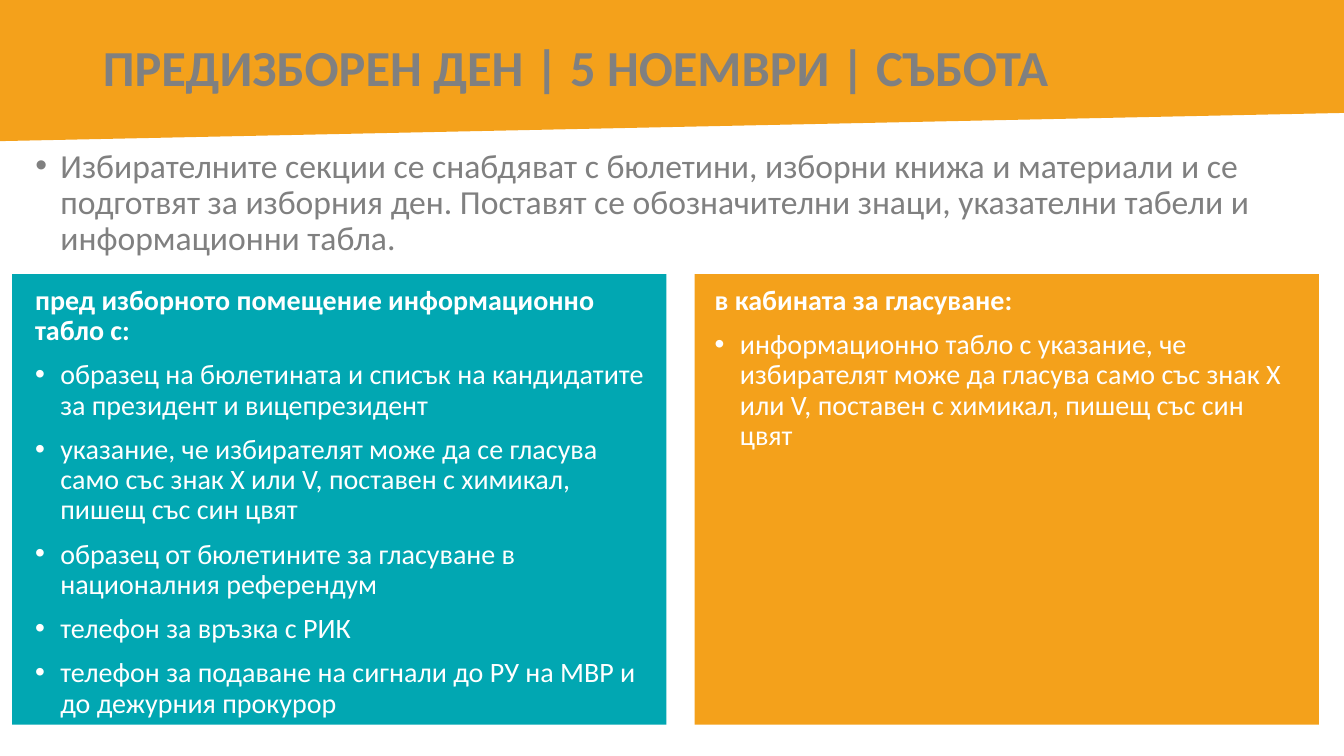
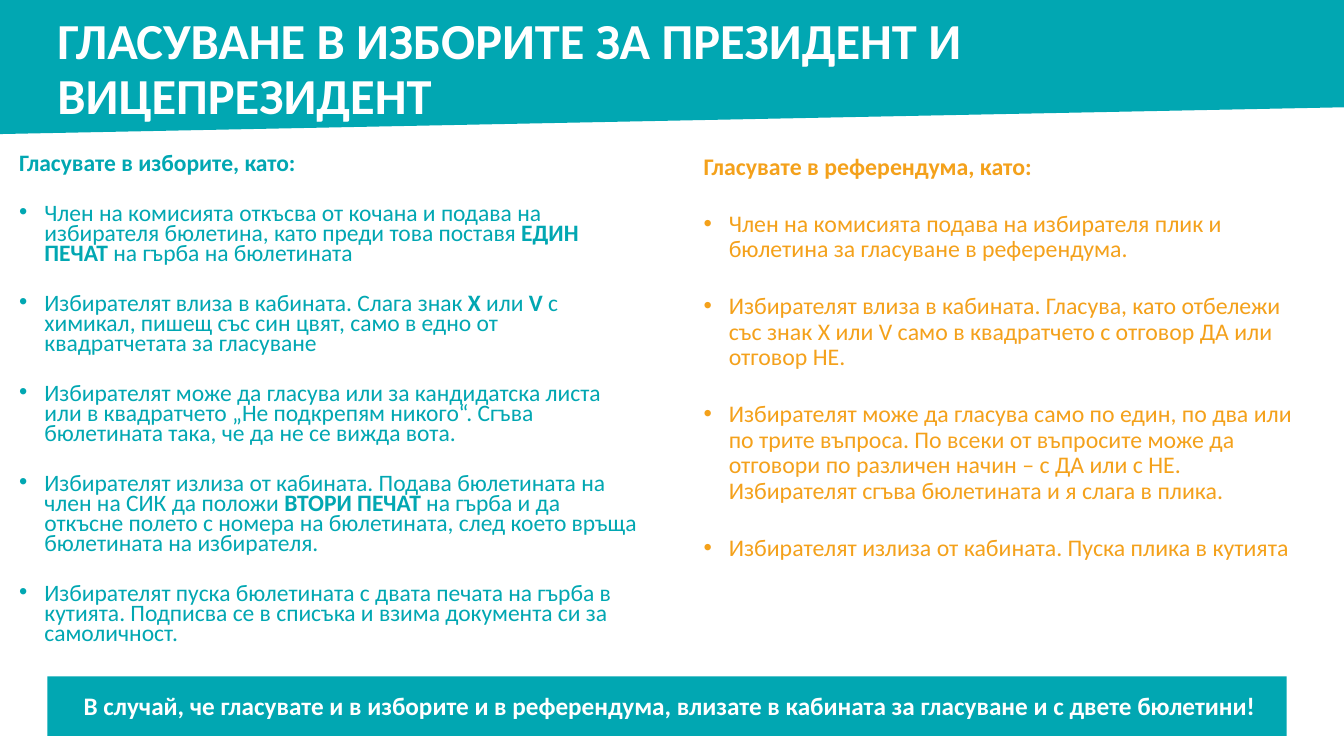
from dataclasses import dataclass

from lxml import etree
from pptx import Presentation
from pptx.dml.color import RGBColor
from pptx.enum.shapes import MSO_SHAPE
from pptx.enum.text import MSO_ANCHOR, MSO_AUTO_SIZE, PP_ALIGN
from pptx.oxml.ns import qn
from pptx.util import Emu, Pt

RECTANGLE = MSO_SHAPE.RECTANGLE
SLANTED = MSO_SHAPE.FLOWCHART_MANUAL_INPUT
MIDDLE, TOP = MSO_ANCHOR.MIDDLE, MSO_ANCHOR.TOP
LEFT = PP_ALIGN.LEFT
NO_AUTOFIT = MSO_AUTO_SIZE.NONE

PX = 9144  # 100 px to the inch
SLIDE_W, SLIDE_H = 1333, 750
BULLET_INDENT = 25
TEAL, ORANGE, GRAY, WHITE = "01A7B2", "F4A11B", "808080", "FFFFFF"
FONT = "Calibri"
TITLE_SIZE = 36


@dataclass(frozen=True)
class Box:
    left: int
    top: int
    width: int
    height: int


@dataclass(frozen=True)
class TextStyle:
    size: float
    color: str
    line: float = 0.9
    before: int = 10
    after: int = 0


@dataclass(frozen=True)
class Section:
    """A heading with bullets; each bullet alternates plain and bold runs."""
    box: Box
    style: TextStyle
    heading: str
    bullets: tuple[tuple[str, ...], ...]


def px(length: int) -> Emu:
    return Emu(length * PX)


def rgb(color: str) -> RGBColor:
    return RGBColor.from_string(color)


def place(shape, box: Box) -> None:
    shape.left, shape.top = px(box.left), px(box.top)
    shape.width, shape.height = px(box.width), px(box.height)


def add_block(slide, kind, box: Box, color: str):
    block = slide.shapes.add_shape(
        kind, px(box.left), px(box.top), px(box.width), px(box.height))
    block.shadow.inherit = False
    block.fill.solid()
    block.fill.fore_color.rgb = rgb(color)
    block.line.fill.background()
    return block


def add_text_box(slide, box: Box):
    return slide.shapes.add_textbox(
        px(box.left), px(box.top), px(box.width), px(box.height))


def prepare_frame(shape, anchor=TOP):
    frame = shape.text_frame
    frame.word_wrap = True
    frame.auto_size = NO_AUTOFIT
    frame.vertical_anchor = anchor
    return frame


def add_run(paragraph, text: str, style: TextStyle, bold: bool) -> None:
    run = paragraph.add_run()
    run.text = text
    run.font.name = FONT
    run.font.size = Pt(style.size)
    run.font.bold = bold
    run.font.color.rgb = rgb(style.color)


def set_bullet(paragraph, color: str, bulleted: bool) -> None:
    properties = paragraph._p.get_or_add_pPr()
    indent = px(BULLET_INDENT) if bulleted else 0
    properties.set("marL", str(indent))
    properties.set("indent", str(-indent))
    if not bulleted:
        etree.SubElement(properties, qn("a:buNone"))
        return
    bullet_color = etree.SubElement(properties, qn("a:buClr"))
    etree.SubElement(bullet_color, qn("a:srgbClr"), val=color)
    etree.SubElement(properties, qn("a:buFont"), typeface="Arial")
    etree.SubElement(properties, qn("a:buChar"), char="•")


def write_paragraph(paragraph, runs: tuple[str, ...], style: TextStyle,
                    bulleted: bool = False, bold: bool = False) -> None:
    """Write runs whose weight alternates, starting from bold or plain."""
    paragraph.alignment = LEFT
    paragraph.line_spacing = style.line
    paragraph.space_before = Pt(style.before)
    paragraph.space_after = Pt(style.after)
    set_bullet(paragraph, style.color, bulleted)
    for index, text in enumerate(runs):
        add_run(paragraph, text, style, bold != (index % 2 == 1))


def write_section(shape, section: Section) -> None:
    place(shape, section.box)
    frame = prepare_frame(shape)
    write_paragraph(frame.paragraphs[0], (section.heading,), section.style, bold=True)
    for runs in section.bullets:
        write_paragraph(frame.add_paragraph(), runs, section.style, bulleted=True)


def add_titled_slide(deck, title: str, title_box: Box, title_color: str,
                     band_height: int, band_color: str):
    slide = deck.slides.add_slide(deck.slide_layouts[1])
    band = add_block(slide, SLANTED, Box(0, 0, SLIDE_W, band_height), band_color)
    band.rotation = 180
    heading = slide.shapes.title
    heading.element.addprevious(band.element)
    place(heading, title_box)
    frame = prepare_frame(heading, MIDDLE)
    style = TextStyle(TITLE_SIZE, title_color, before=0)
    write_paragraph(frame.paragraphs[0], (title,), style, bold=True)
    return slide


PANEL_STYLE = TextStyle(20, WHITE)
INTRO = ("Избирателните секции се снабдяват с бюлетини, изборни книжа и материали "
         "и се подготвят за изборния ден. Поставят се обозначителни знаци, "
         "указателни табели и информационни табла.")
OUTSIDE_ROOM = Section(
    Box(25, 279, 636, 445), PANEL_STYLE,
    "пред изборното помещение информационно табло с:",
    (
        ("образец на бюлетината и списък на кандидатите за президент и "
         "вицепрезидент",),
        ("указание, че избирателят може да се гласува само със знак Х или V, "
         "поставен с химикал, пишещ със син цвят",),
        ("образец от бюлетините за гласуване в националния референдум",),
        ("телефон за връзка с РИК",),
        ("телефон за подаване на сигнали до РУ на МВР и до дежурния прокурор",),
    ))
IN_BOOTH = Section(
    Box(699, 279, 597, 453), PANEL_STYLE,
    "в кабината за гласуване:",
    (
        ("информационно табло с указание, че избирателят може да гласува само "
         "със знак Х или V, поставен с химикал, пишещ със син цвят",),
    ))
ELECTION = Section(
    Box(9, 149, 638, 543), TextStyle(16.8, TEAL, line=0.7, after=12),
    "Гласувате в изборите, като:",
    (
        ("Член на комисията откъсва от кочана и подава на избирателя бюлетина, "
         "като преди това поставя ", "ЕДИН ПЕЧАТ ", "на гърба на бюлетината"),
        ("Избирателят влиза в кабината. Слага знак ", "X ", "или ", "V",
         " с химикал, пишещ със син цвят, само в едно от квадратчетата за гласуване"),
        ("Избирателят може да гласува или за кандидатска листа или в квадратчето "
         "„Не подкрепям никого“. Сгъва бюлетината така, че да не се вижда вота.",),
        ("Избирателят излиза от кабината. Подава бюлетината на член на СИК да "
         "положи ", "ВТОРИ ПЕЧАТ ", "на гърба и да откъсне полето с номера на "
         "бюлетината, след което връща бюлетината на избирателя."),
        ("Избирателят пуска бюлетината с двата печата на гърба в кутията. "
         "Подписва се в списъка и взима документа си за самоличност.",),
    ))
REFERENDUM = Section(
    Box(688, 149, 608, 567), TextStyle(17, ORANGE, after=12),
    "Гласувате в референдума, като:",
    (
        ("Член на комисията подава на избирателя плик и бюлетина за гласуване "
         "в референдума.",),
        ("Избирателят влиза в кабината. Гласува, като отбележи със знак X или V "
         "само в квадратчето с отговор ДА или отговор НЕ.",),
        ("Избирателят може да гласува само по един, по два или по трите въпроса. "
         "По всеки от въпросите може да отговори по различен начин – с ДА или с НЕ. "
         "Избирателят сгъва бюлетината и я слага в плика.",),
        ("Избирателят излиза от кабината. Пуска плика в кутията",),
    ))
BOTH_BALLOTS = ("В случай, че гласувате и в изборите и в референдума, влизате в "
                "кабината за гласуване и с двете бюлетини!")


def build_eve_slide(deck) -> None:
    slide = add_titled_slide(deck, "ПРЕДИЗБОРЕН ДЕН | 5 НОЕМВРИ | СЪБОТА",
                             Box(92, 16, 1150, 108), GRAY, 140, ORANGE)
    intro = slide.placeholders[1]
    place(intro, Box(25, 143, 1283, 144))
    write_paragraph(prepare_frame(intro).paragraphs[0], (INTRO,),
                    TextStyle(24, GRAY), bulleted=True)
    panels = ((OUTSIDE_ROOM, Box(12, 272, 649, 447), TEAL),
              (IN_BOOTH, Box(689, 272, 619, 447), ORANGE))
    for section, panel, color in panels:
        add_block(slide, RECTANGLE, panel, color)
        write_section(add_text_box(slide, section.box), section)


def build_voting_slide(deck) -> None:
    slide = add_titled_slide(deck, "ГЛАСУВАНЕ В ИЗБОРИТЕ ЗА ПРЕЗИДЕНТ И ВИЦЕПРЕЗИДЕНТ",
                             Box(47, 16, 1248, 108), WHITE, 133, TEAL)
    write_section(slide.placeholders[1], ELECTION)
    write_section(add_text_box(slide, REFERENDUM.box), REFERENDUM)
    add_block(slide, RECTANGLE, Box(47, 671, 1229, 59), TEAL)
    reminder = add_text_box(slide, Box(73, 680, 1192, 40))
    write_paragraph(prepare_frame(reminder).paragraphs[0], (BOTH_BALLOTS,),
                    TextStyle(18, WHITE, line=1.0, before=0), bold=True)


def main() -> None:
    deck = Presentation()
    deck.slide_width, deck.slide_height = px(SLIDE_W), px(SLIDE_H)
    build_eve_slide(deck)
    build_voting_slide(deck)
    deck.save("out.pptx")


if __name__ == "__main__":
    main()
